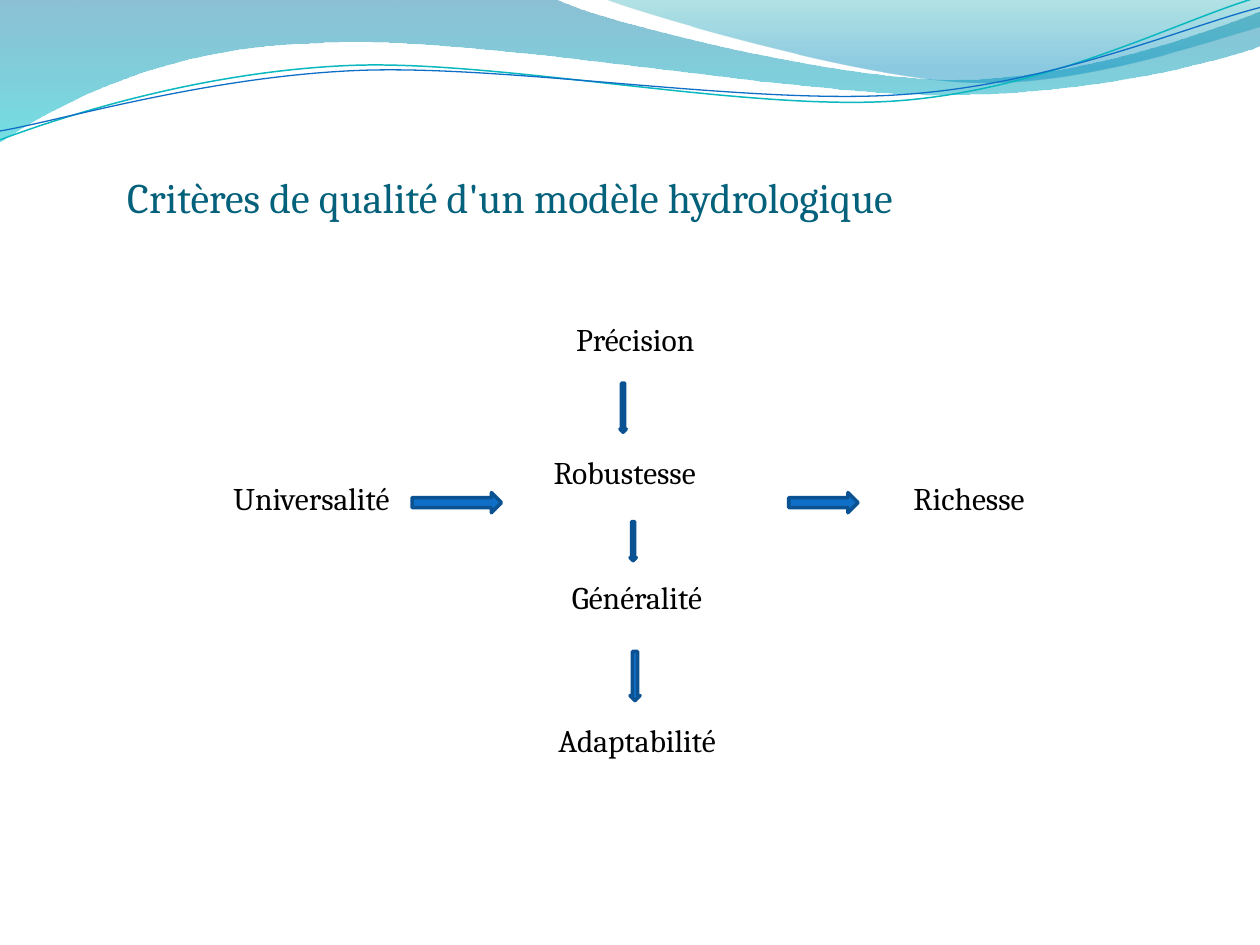
import math

from lxml import etree
from pptx import Presentation
from pptx.dml.color import RGBColor
from pptx.enum.shapes import MSO_SHAPE
from pptx.enum.text import MSO_ANCHOR, PP_ALIGN
from pptx.oxml.ns import qn
from pptx.util import Inches, Pt

DOWN, RIGHT = MSO_SHAPE.DOWN_ARROW, MSO_SHAPE.RIGHT_ARROW
FONT = "Cambria"
TITLE_ONLY = 5
CURVE_TILT = -2.7
LABEL_HEIGHT = 0.4
COLORS = {
    "title": "04617B", "text": "000000",
    "arrow": "0F6FC6", "arrow_line": "0B5292",
    "teal_line": "0AB8BF", "blue_line": "0F6FC6",
}

# Outlines: segments of one point (start or straight) or three (Bézier curve)
LEFT_WAVE = [
    [(0, 0)], [(4.4, -0.01)],
    [(4.76, 0.17), (6.64, 0.63), (7.58, 0.63)],
    [(8.53, 0.63), (9.58, 0.26), (10, 0.09)],
    [(10.01, 0.36)],
    [(9.83, 0.44), (8.7, 0.76), (7.46, 0.75)],
    [(6.22, 0.75), (3.82, 0.28), (2.57, 0.34)],
    [(1.29, 0.36), (0.46, 0.83), (-0.01, 1.13)],
]
RIGHT_WAVE = [
    [(4.79, -0.01)],
    [(5.09, 0.11), (6.82, 0.62), (7.69, 0.65)],
    [(8.56, 0.69), (9.61, 0.32), (10, 0.21)],
    [(10, 0)],
]
TEAL_CURVE = [
    [(0, 1.11)],
    [(0.48, 0.93), (1.58, 0.57), (2.77, 0.52)],
    [(3.95, 0.47), (5.93, 0.89), (7.13, 0.8)],
    [(8.33, 0.71), (9.38, 0.15), (9.98, -0.02)],
]
BLUE_CURVE = [
    [(0, 1.04)],
    [(0.47, 0.96), (1.64, 0.61), (2.83, 0.56)],
    [(4.03, 0.51), (5.97, 0.84), (7.17, 0.75)],
    [(8.36, 0.67), (9.41, 0.21), (10, 0.06)],
]

# Gradient stops: position, colour, opacity in percent
LEFT_STOPS = [(0, "0074A1", 45), (1, "00C6CF", 55)]
RIGHT_STOPS = [(0, "00A1A9", 30), (0.8, "008BBF", 45)]

# Label: text, left, top, width
LABELS = [
    ("Précision", 3.9, 2.49, 1.71),
    ("Robustesse", 4.29, 3.55, 1.33),
    ("Généralité", 4.34, 4.54, 1.33),
    ("Universalité", 0.75, 3.75, 2.44),
    ("Richesse", 6.5, 3.75, 1.73),
    ("Adaptabilité", 4.23, 5.67, 1.55),
]

# Arrow: preset, left, top, width, height
ARROWS = [
    (DOWN, 5, 4.14, 0.05, 0.31),
    (DOWN, 5, 5.17, 0.08, 0.39),
    (RIGHT, 6.26, 3.91, 0.55, 0.16),
    (DOWN, 4.92, 3.04, 0.05, 0.39),
    (RIGHT, 3.27, 3.91, 0.71, 0.16),
]


def rgb(value):
    return RGBColor.from_string(value)


def place(shape, left, top, width, height):
    shape.left, shape.top = Inches(left), Inches(top)
    shape.width, shape.height = Inches(width), Inches(height)


def write_text(shape, text, size=18, color="text", align=PP_ALIGN.LEFT, inset=0.1):
    frame = shape.text_frame
    frame.word_wrap = True
    frame.vertical_anchor = MSO_ANCHOR.TOP
    frame.margin_left = Inches(inset)
    para = frame.paragraphs[0]
    para.alignment = align
    span = para.add_run()
    span.text = text
    span.font.name = FONT
    span.font.size = Pt(size)
    span.font.color.rgb = rgb(COLORS[color])


def turn(outline, degrees, center):
    """Turn every point of an outline clockwise about the center."""
    cos, sin = math.cos(math.radians(degrees)), math.sin(math.radians(degrees))
    middle_x, middle_y = center
    return [
        [(middle_x + (x - middle_x) * cos - (y - middle_y) * sin,
          middle_y + (x - middle_x) * sin + (y - middle_y) * cos) for x, y in segment]
        for segment in outline
    ]


def add_outline(page, outline, closed):
    anchors = [tuple(map(Inches, segment[-1])) for segment in outline]
    builder = page.shapes.build_freeform(*anchors[0])
    builder.add_line_segments(anchors[1:], close=closed)
    shape = builder.convert_to_shape()
    shape.shadow.inherit = False
    # Bend the straight segments that have control points
    lines = list(shape.element.iter(qn("a:lnTo")))
    for line, segment in zip(lines, outline[1:]):
        if len(segment) == 3:
            curve = etree.Element(qn("a:cubicBezTo"))
            for x, y in segment:
                point = etree.SubElement(curve, qn("a:pt"))
                point.set("x", str(Inches(x) - shape.left))
                point.set("y", str(Inches(y) - shape.top))
            line.getparent().replace(line, curve)
    return shape


def add_wave(page, outline, stops):
    shape = add_outline(page, outline, closed=True)
    shape.line.fill.background()
    shape.fill.gradient()
    shape.fill.gradient_angle = 270
    for stop, (position, color, _) in zip(shape.fill.gradient_stops, stops):
        stop.position = position
        stop.color.rgb = rgb(color)
    # Opacity of each stop
    for node, (_, _, opacity) in zip(shape.element.spPr.iter(qn("a:srgbClr")), stops):
        etree.SubElement(node, qn("a:alpha")).set("val", str(opacity * 1000))


def add_curve(page, outline, color, width, center):
    level = turn(outline, -CURVE_TILT, center)
    shape = add_outline(page, level, closed=False)
    shape.rotation = CURVE_TILT
    shape.fill.background()
    shape.line.color.rgb = rgb(COLORS[color])
    shape.line.width = Pt(width)


def add_label(page, text, left, top, width):
    box = page.shapes.add_textbox(
        Inches(left), Inches(top), Inches(width), Inches(LABEL_HEIGHT))
    write_text(box, text, align=PP_ALIGN.RIGHT)


def add_arrow(page, preset, *bounds):
    arrow = page.shapes.add_shape(preset, *map(Inches, bounds))
    arrow.shadow.inherit = False
    arrow.fill.solid()
    arrow.fill.fore_color.rgb = rgb(COLORS["arrow"])
    arrow.line.color.rgb = rgb(COLORS["arrow_line"])
    arrow.line.width = Pt(2)


def main():
    deck = Presentation()
    deck.slide_width, deck.slide_height = Inches(10), Inches(7.5)
    page = deck.slides.add_slide(deck.slide_layouts[TITLE_ONLY])

    # Wave decoration along the top
    add_wave(page, LEFT_WAVE, LEFT_STOPS)
    add_wave(page, RIGHT_WAVE, RIGHT_STOPS)
    add_curve(page, TEAL_CURVE, "teal_line", 0.85, center=(4.99, 0.58))
    add_curve(page, BLUE_CURVE, "blue_line", 0.75, center=(5, 0.59))

    # Title
    title = page.shapes.title
    place(title, 0.83, 1.31, 8.19, 0.5)
    write_text(title, "Critères de qualité d'un modèle hydrologique",
               size=24, color="title", inset=0.18)

    # Criteria and the arrows between them
    for label in LABELS:
        add_label(page, *label)
    for arrow in ARROWS:
        add_arrow(page, *arrow)

    deck.save("out.pptx")


if __name__ == "__main__":
    main()
